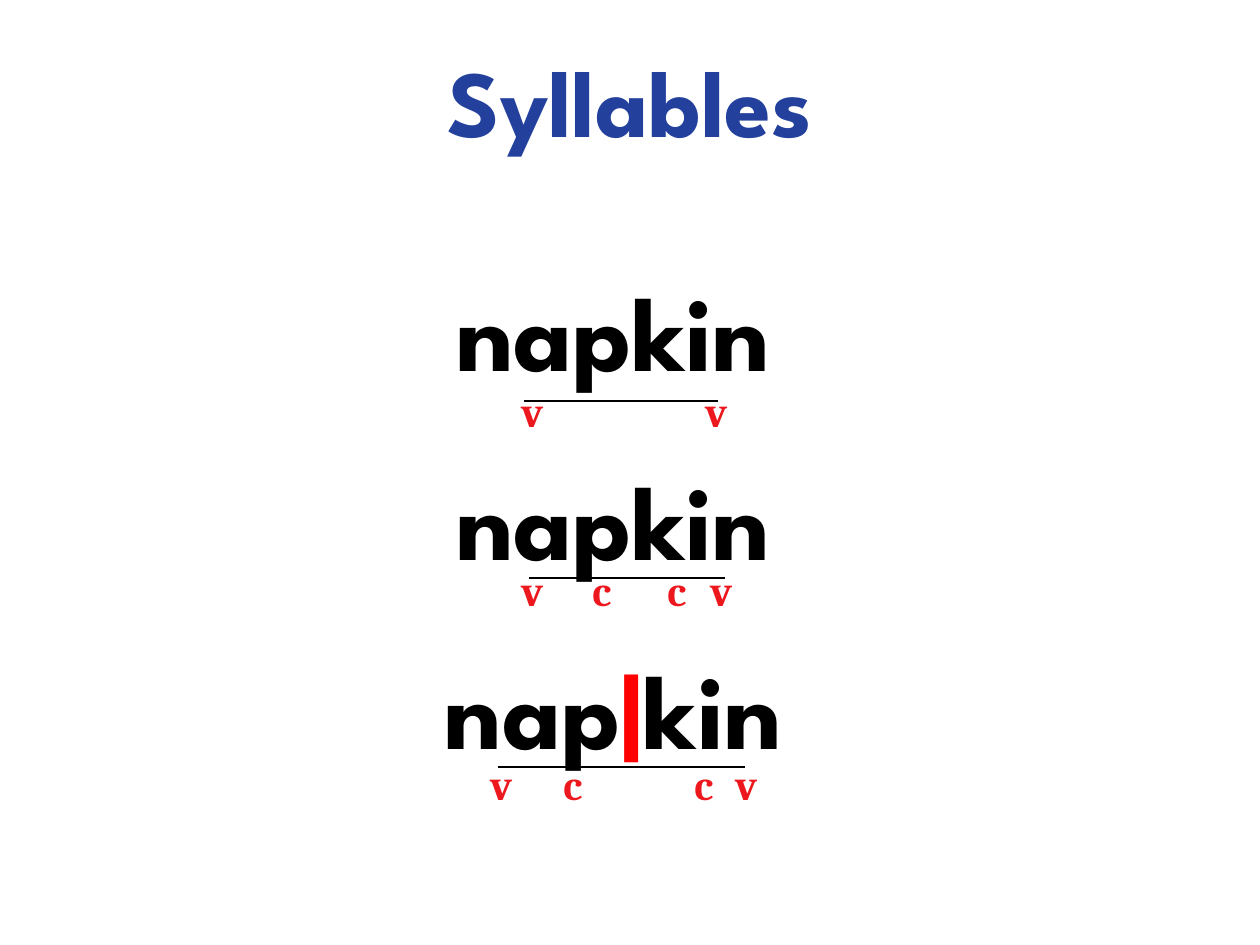
from dataclasses import dataclass
from typing import NamedTuple

from lxml import etree
from pptx import Presentation
from pptx.dml.color import RGBColor
from pptx.enum.shapes import MSO_CONNECTOR
from pptx.enum.text import MSO_ANCHOR, MSO_AUTO_SIZE, PP_ALIGN
from pptx.oxml.ns import qn
from pptx.slide import Slide
from pptx.util import Emu, Pt

STRAIGHT = MSO_CONNECTOR.STRAIGHT
TOP = MSO_ANCHOR.TOP
FIT_SHAPE = MSO_AUTO_SIZE.SHAPE_TO_FIT_TEXT
FIXED_SHAPE = MSO_AUTO_SIZE.NONE
CENTER, LEFT = PP_ALIGN.CENTER, PP_ALIGN.LEFT
EMU_PER_INCH = 914400
PX_PER_INCH = 126


@dataclass(frozen=True)
class Theme:
    word_font: str = "League Spartan"
    mark_font: str = "Cambria"
    title_color: str = "22409C"
    word_color: str = "000000"
    divider_color: str = "FF0000"
    mark_color: str = "ED181E"
    line_color: str = "000000"
    title_size: int = 54
    word_size: int = 60
    mark_size: int = 24
    line_width: float = 0.75


THEME = Theme()


class Frame(NamedTuple):
    left: int
    top: int
    width: int
    height: int


class Span(NamedTuple):
    text: str
    color: str


class Mark(NamedTuple):
    letter: str
    left: int


@dataclass(frozen=True)
class TextStyle:
    font: str
    size: int
    alignment: PP_ALIGN = CENTER
    line_spacing: float = 1.0
    wrap: bool = True


@dataclass(frozen=True)
class WordStep:
    spans: tuple[Span, ...]
    top: int
    line_spacing: float
    marks: tuple[Mark, ...]
    marks_top: int
    line_start: int
    line_end: int
    line_y: int


WHOLE_WORD = (Span("napkin", THEME.word_color),)
SPLIT_WORD = (
    Span("nap", THEME.word_color),
    Span("|", THEME.divider_color),
    Span("kin", THEME.word_color),
)
STEPS = (
    WordStep(WHOLE_WORD, 285, 0.8,
             (Mark("v", 509), Mark("v", 693)), 379, 524, 718, 401),
    WordStep(WHOLE_WORD, 464, 0.9,
             (Mark("v", 509), Mark("c", 580), Mark("c", 655), Mark("v", 698)),
             558, 529, 725, 578),
    WordStep(SPLIT_WORD, 653, 0.9,
             (Mark("v", 478), Mark("c", 551), Mark("c", 682), Mark("v", 723)),
             752, 498, 745, 767),
)
MARK_WIDTHS = {"v": 47, "c": 44}


def px(length: int) -> Emu:
    return Emu(round(length * EMU_PER_INCH / PX_PER_INCH))


def add_text(page: Slide, frame: Frame, spans: tuple[Span, ...], style: TextStyle) -> None:
    box = page.shapes.add_textbox(*map(px, frame))
    text_frame = box.text_frame
    text_frame.word_wrap = style.wrap
    text_frame.auto_size = FIXED_SHAPE if style.wrap else FIT_SHAPE
    text_frame.vertical_anchor = TOP
    para = text_frame.paragraphs[0]
    para.alignment = style.alignment
    para.line_spacing = style.line_spacing
    for span in spans:
        run = para.add_run()
        run.text = span.text
        run.font.name = style.font
        run.font.size = Pt(style.size)
        run.font.bold = True
        run.font.color.rgb = RGBColor.from_string(span.color)


def add_line(page: Slide, start: int, end: int, y: int) -> None:
    line = page.shapes.add_connector(STRAIGHT, px(start), px(y), px(end), px(y))
    line.line.color.rgb = RGBColor.from_string(THEME.line_color)
    line.line.width = Pt(THEME.line_width)
    etree.SubElement(line._element.spPr, qn("a:effectLst"))


def add_step(page: Slide, step: WordStep) -> None:
    word_style = TextStyle(THEME.word_font, THEME.word_size, line_spacing=step.line_spacing)
    add_text(page, Frame(78, step.top, 1071, 116), step.spans, word_style)
    mark_style = TextStyle(THEME.mark_font, THEME.mark_size, LEFT, wrap=False)
    for mark in step.marks:
        frame = Frame(mark.left, step.marks_top, MARK_WIDTHS[mark.letter], 63)
        add_text(page, frame, (Span(mark.letter, THEME.mark_color),), mark_style)
    add_line(page, step.line_start, step.line_end, step.line_y)


def main() -> None:
    deck = Presentation()
    deck.slide_width, deck.slide_height = px(1260), px(945)
    page = deck.slides.add_slide(deck.slide_layouts[6])
    title_style = TextStyle(THEME.word_font, THEME.title_size, line_spacing=0.9)
    add_text(page, Frame(0, 50, 1260, 183), (Span("Syllables", THEME.title_color),), title_style)
    for step in STEPS:
        add_step(page, step)
    deck.save("out.pptx")


if __name__ == "__main__":
    main()
